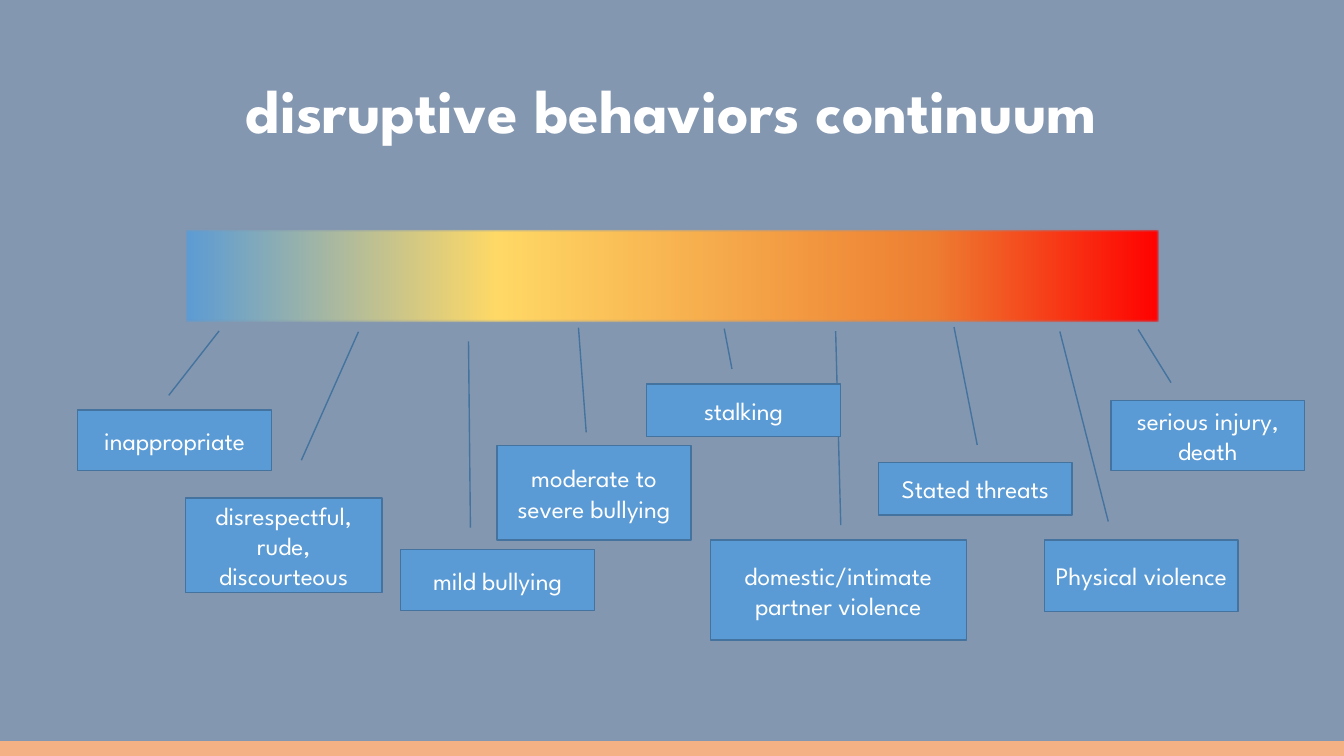
from copy import deepcopy

from lxml import etree
from pptx import Presentation
from pptx.dml.color import RGBColor
from pptx.enum import shapes, text
from pptx.oxml import ns
from pptx.util import Cm, Pt

FONT = "League Spartan"
WIDE, HIGH = 33.87, 19.05
BACK, WHITE, PEACH = "8497B0", "FFFFFF", "F4B183"
BLUE, EDGE = "5B9BD5", "43739E"
STOPS = [(0, BLUE), (0.32, "FFD966"), (0.77, "ED7D31"), (1, "FF0000")]

# Label, box in cm, then leader start and end (y, x) as shares of the box
LABELS = [
    ("domestic/intimate partner violence", (17.9, 13.61, 6.45, 2.52), (-0.15, 0.51, -2.09, 0.49)),
    ("inappropriate", (1.96, 10.33, 4.88, 1.53), (-0.24, 0.47, -1.3, 0.73)),
    ("disrespectful, rude, discourteous", (4.67, 12.55, 4.96, 2.38), (-1.76, 0.88, -0.4, 0.59)),
    ("mild bullying", (10.1, 13.84, 4.88, 1.55), (-0.35, 0.36, -3.38, 0.35)),
    ("moderate to severe bullying", (12.53, 11.23, 4.88, 2.38), (-0.14, 0.46, -1.25, 0.42)),
    ("stalking", (16.3, 9.68, 4.88, 1.32), (-1.06, 0.4, -0.29, 0.44)),
    ("Stated threats", (22.14, 11.66, 4.88, 1.32), (-0.34, 0.51, -2.59, 0.39)),
    ("Physical violence", (26.32, 13.61, 4.88, 1.8), (-0.26, 0.33, -2.92, 0.08)),
    ("serious injury, death", (28, 10.1, 4.88, 1.76), (-0.26, 0.31, -1.02, 0.14)),
]


def color(code):
    return RGBColor.from_string(code)


def write(shape, words, size=18, bold=False, space=1.0):
    frame = shape.text_frame
    frame.word_wrap = True
    frame.vertical_anchor = text.MSO_ANCHOR.MIDDLE
    para = frame.paragraphs[0]
    para.alignment = text.PP_ALIGN.CENTER
    para.line_spacing = space
    run = para.add_run()
    run.text = words
    run.font.name = FONT
    run.font.size = Pt(size)
    run.font.bold = bold
    run.font.color.rgb = color(WHITE)


def block(slide, box, fill, line, kind=shapes.MSO_SHAPE.RECTANGLE):
    shape = slide.shapes.add_shape(kind, *map(Cm, box))
    shape.shadow.inherit = False
    shape.fill.solid()
    shape.fill.fore_color.rgb = color(fill)
    shape.line.color.rgb = color(line)
    shape.line.width = Pt(1)
    return shape


def title(slide, box):
    area = slide.shapes.add_textbox(*map(Cm, box))
    write(area, "disruptive behaviors continuum", size=44, bold=True, space=0.9)


def scale(slide, box):
    bar = block(slide, box, BLUE, BACK)
    bar.fill.gradient()
    bar.fill.gradient_angle = 0
    # A new gradient has two stops; add the missing ones
    props = bar.element.spPr
    stops = props.find(".//" + ns.qn("a:gsLst"))
    for _ in STOPS[2:]:
        stops.append(deepcopy(stops[0]))
    for stop, (place, code) in zip(bar.fill.gradient_stops, STOPS):
        stop.position = place
        stop.color.rgb = color(code)
    # Slightly soft edge
    soft = etree.SubElement(props.find(ns.qn("a:effectLst")), ns.qn("a:softEdge"))
    soft.set("rad", str(Pt(1)))


def label(slide, box, words, leader):
    shape = block(slide, box, BLUE, EDGE, shapes.MSO_SHAPE.LINE_CALLOUT_1)
    for index, share in enumerate(leader):
        shape.adjustments[index] = share
    write(shape, words)


def main():
    deck = Presentation()
    deck.slide_width, deck.slide_height = Cm(WIDE), Cm(HIGH)
    slide = deck.slides.add_slide(deck.slide_layouts[6])
    slide.background.fill.solid()
    slide.background.fill.fore_color.rgb = color(BACK)

    # Heading and color scale
    title(slide, (2.33, 1.02, 29.21, 3.68))
    scale(slide, (4.67, 5.77, 24.54, 2.34))

    # Behaviors along the scale
    for words, box, leader in LABELS:
        label(slide, box, words, leader)

    # Bottom strip
    block(slide, (0, HIGH - 0.36, WIDE, 0.36), PEACH, PEACH)
    deck.save("out.pptx")


if __name__ == "__main__":
    main()
